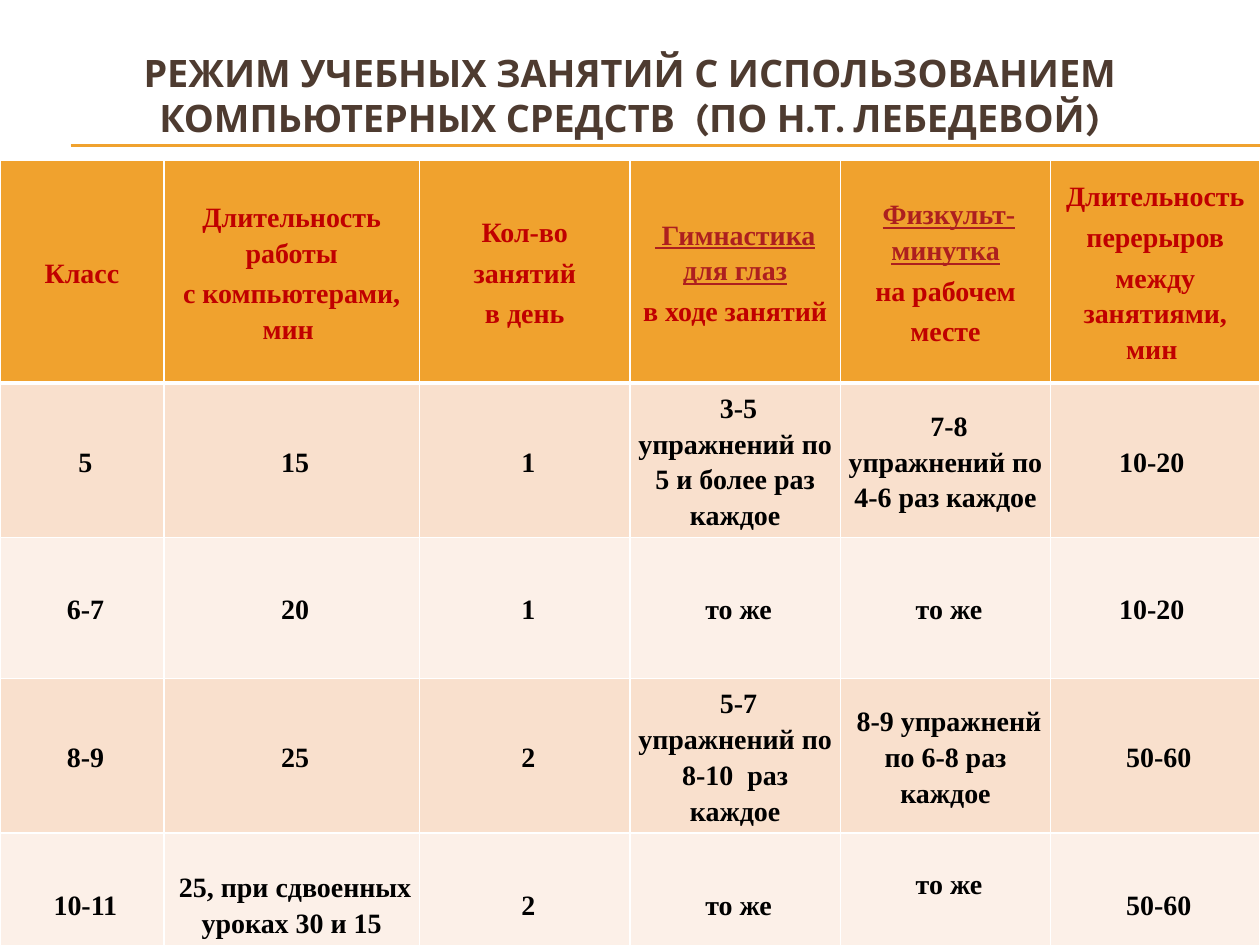
from dataclasses import dataclass

from lxml.etree import SubElement
from pptx import Presentation
from pptx.dml.color import RGBColor
from pptx.enum.shapes import MSO_CONNECTOR
from pptx.enum.text import MSO_ANCHOR, PP_ALIGN
from pptx.oxml.ns import qn
from pptx.util import Inches, Pt


@dataclass(frozen=True)
class Theme:
    title_font: str = "Karla"
    table_font: str = "Times New Roman"
    title_size: float = 21.6
    table_size: float = 16
    title: str = "4E3B30"
    accent: str = "F0A22E"
    heading: str = "C00000"
    link: str = "AD1F1F"
    body: str = "000000"
    bands: tuple = ("F9E0CD", "FCF0E8")
    border: str = "FFFFFF"
    thin: float = 1
    thick: float = 3


THEME = Theme()
WIDTH, HEIGHT = 10, 7.5
SIDE_MARGIN = 0.04
LINE_HEIGHT = 0.33
HEADER_SPACING = 1.4
COLUMN_WIDTHS = [1.3, 2.03] + [1.67] * 3 + [1.66]
ROW_HEIGHTS = [1.77] + [1.18, 1.12] * 2

TITLE = "РЕЖИМ УЧЕБНЫХ ЗАНЯТИЙ С ИСПОЛЬЗОВАНИЕМ КОМПЬЮТЕРНЫХ СРЕДСТВ  (ПО Н.Т. ЛЕБЕДЕВОЙ)"
LINK_MARK = "_"
ROWS = [
    ["Класс",
     "Длительность работы\nс компьютерами, мин ",
     "Кол-во\nзанятий\n в день ",
     "_ Гимнастика для глаз_\nв ходе занятий",
     " _Физкульт-минутка_\nна рабочем\nместе",
     "Длительность\nперерыров\nмежду занятиями, мин "],
    [" 5", " 15", " 1", " 3-5 упражнений по 5 и более раз каждое",
     " 7-8 упражнений по 4-6 раз каждое", "10-20 "],
    [" 6-7", " 20", " 1", " то же", " то же", "10-20 "],
    [" 8-9", " 25", " 2", " 5-7 упражнений по 8-10  раз каждое",
     " 8-9 упражненй по 6-8 раз каждое", " 50-60"],
    [" 10-11", " 25, при сдвоенных уроках 30 и 15", " 2", " то же", " то же", " 50-60"],
]


def add_run(paragraph, text, font, size, color, underline=None):
    run = paragraph.add_run()
    run.text = text
    run.font.name = font
    run.font.size = Pt(size)
    run.font.bold = True
    run.font.underline = underline
    run.font.color.rgb = RGBColor.from_string(color)


def add_title(slide):
    shape = slide.shapes.add_textbox(0, Inches(0.24), Inches(WIDTH), Inches(1.02))
    frame = shape.text_frame
    frame.word_wrap = True
    frame.vertical_anchor = MSO_ANCHOR.MIDDLE
    paragraph = frame.paragraphs[0]
    paragraph.alignment = PP_ALIGN.CENTER
    add_run(paragraph, TITLE, THEME.title_font, THEME.title_size, THEME.title)


def add_rule(slide, top):
    connector = slide.shapes.add_connector(
        MSO_CONNECTOR.STRAIGHT, Inches(0.56), Inches(top), Inches(WIDTH), Inches(top))
    connector.line.color.rgb = RGBColor.from_string(THEME.accent)
    connector.line.width = Pt(0.75)
    SubElement(connector._element.spPr, qn("a:effectLst"))


def set_borders(cell, top, bottom):
    properties = cell._tc.get_or_add_tcPr()
    widths = {"lnL": THEME.thin, "lnR": THEME.thin, "lnT": top, "lnB": bottom}
    for side, width in widths.items():
        line = SubElement(properties, qn(f"a:{side}"), w=str(Pt(width)))
        fill = SubElement(line, qn("a:solidFill"))
        SubElement(fill, qn("a:srgbClr"), val=THEME.border)


def write_cell(cell, text, color, spacing):
    cell.vertical_anchor = MSO_ANCHOR.MIDDLE
    cell.margin_left = cell.margin_right = Inches(SIDE_MARGIN)
    cell.margin_top = cell.margin_bottom = 0
    frame = cell.text_frame
    for index, line in enumerate(text.split("\n")):
        paragraph = frame.add_paragraph() if index else frame.paragraphs[0]
        paragraph.alignment = PP_ALIGN.CENTER
        paragraph.line_spacing = 1.15
        paragraph.space_before = paragraph.space_after = Pt(spacing)
        for position, part in enumerate(line.split(LINK_MARK)):
            linked = position % 2 == 1
            if part:
                add_run(paragraph, part, THEME.table_font, THEME.table_size,
                        THEME.link if linked else color, linked or None)


def add_schedule(slide):
    shape = slide.shapes.add_table(
        len(ROWS), len(COLUMN_WIDTHS), 0, Inches(1.27),
        Inches(WIDTH), Inches(sum(ROW_HEIGHTS)))
    table = shape.table
    table.horz_banding = False
    for column, width in zip(table.columns, COLUMN_WIDTHS):
        column.width = Inches(width)
    for number, (row, height, texts) in enumerate(zip(table.rows, ROW_HEIGHTS, ROWS)):
        row.height = Inches(height)
        header = number == 0
        background = THEME.accent if header else THEME.bands[(number - 1) % 2]
        color = THEME.heading if header else THEME.body
        spacing = HEADER_SPACING if header else 0
        top = THEME.thick if number == 1 else THEME.thin
        bottom = THEME.thick if header else THEME.thin
        for cell, text in zip(row.cells, texts):
            set_borders(cell, top, bottom)
            cell.fill.solid()
            cell.fill.fore_color.rgb = RGBColor.from_string(background)
            write_cell(cell, text, color, spacing)
    raised_cell = table.cell(len(ROWS) - 1, 4)
    raised_cell.margin_bottom = Inches(LINE_HEIGHT)


def main():
    presentation = Presentation()
    presentation.slide_width = Inches(WIDTH)
    presentation.slide_height = Inches(HEIGHT)
    slide = presentation.slides.add_slide(presentation.slide_layouts[6])
    for top in (1.15, 1.16):
        add_rule(slide, top)
    add_title(slide)
    add_schedule(slide)
    presentation.save("out.pptx")


if __name__ == "__main__":
    main()
